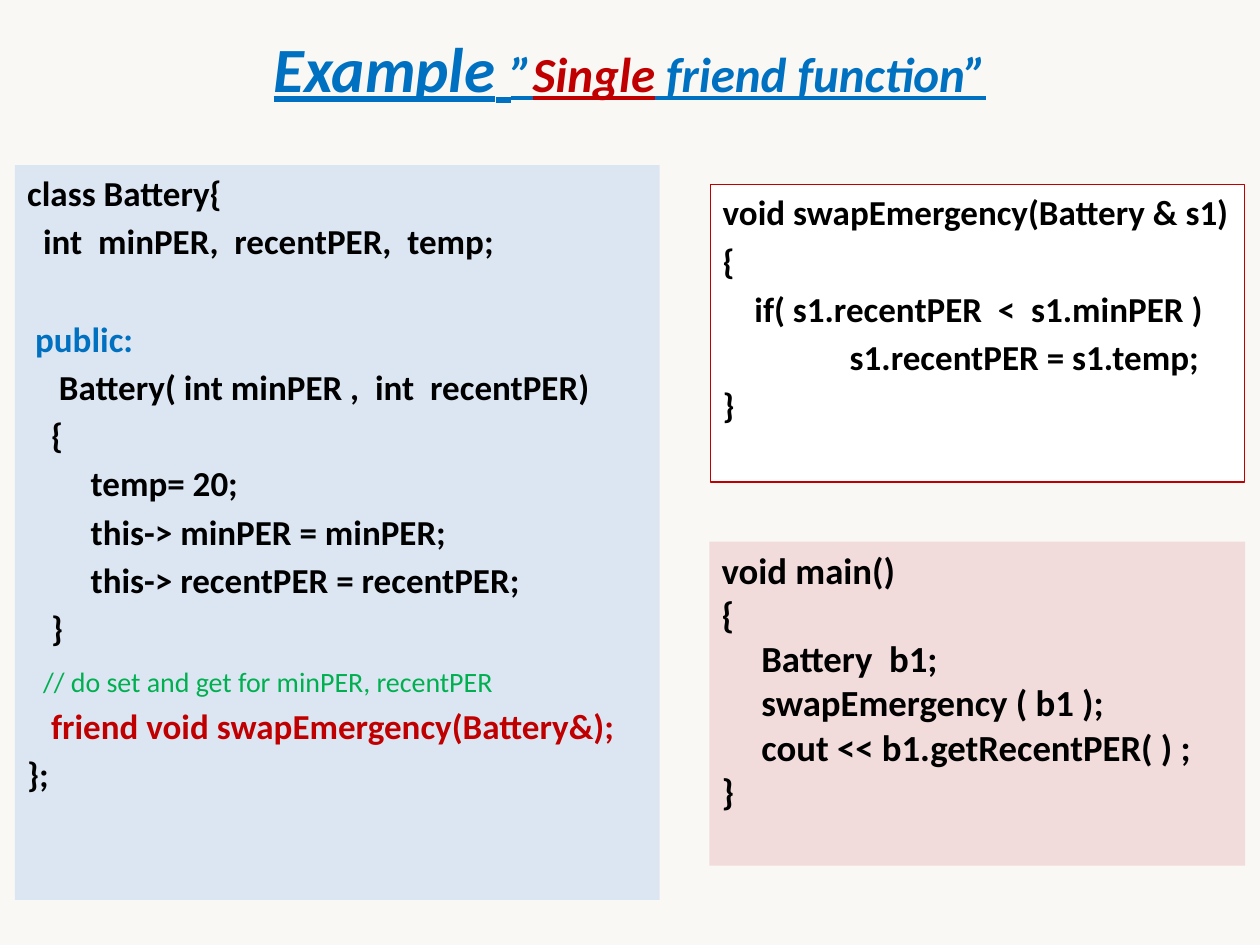
from pptx import Presentation
from pptx.dml.color import RGBColor
from pptx.enum.shapes import MSO_SHAPE
from pptx.enum.text import MSO_ANCHOR, MSO_AUTO_SIZE, PP_ALIGN
from pptx.util import Cm, Pt

BLACK, BLUE, RED, GREEN = "000000", "0070C0", "C00000", "00B050"
FONT = "Calibri"
BACKGROUND = "F9F8F4"
INDENT_STEP = 0.16  # cm, one column of code

TITLE_BOX = (1.27, -0.28, 22.86, 3.18)
TITLE = [  # text, size, italic, colour
    ("Example", 36, True, BLUE),
    (" ", 40, False, BLUE),
    ("”", 28, True, BLUE),
    ("Single", 28, True, RED),
    (" friend function”", 28, True, BLUE),
]

# Each line: indent in columns, text, then format values that differ from the panel's
PANELS = [
    {
        "box": (0.3, 3.33, 13, 14.81), "fill": "DCE6F2", "line": None,
        "size": 20, "space": 3.6,
        "lines": [
            (0, "class Battery{", {}),
            (2, "int  minPER,  recentPER,  temp;", {}),
            (1, "public:", {"color": BLUE, "space": 31.6}),
            (4, "Battery( int minPER ,  int  recentPER)", {}),
            (3, "{", {}),
            (8, "temp= 20;", {}),
            (8, "this-> minPER = minPER;", {}),
            (8, "this-> recentPER = recentPER;", {}),
            (3, "}", {}),
            (2, "// do set and get for minPER, recentPER",
             {"color": GREEN, "size": 16, "bold": False, "height": 24.4}),
            (3, "friend void swapEmergency(Battery&);", {"color": RED}),
            (0, "};", {}),
        ],
    },
    {
        "box": (14.32, 3.72, 10.77, 6), "fill": "FFFFFF", "line": RED,
        "size": 20, "space": 3.6,
        "lines": [
            (0, "void swapEmergency(Battery & s1)", {}),
            (0, "{", {}),
            (4, "if( s1.recentPER  <  s1.minPER )", {}),
            (16, "s1.recentPER = s1.temp;", {}),
            (0, "}", {}),
        ],
    },
    {
        "box": (14.3, 10.92, 10.8, 6.53), "fill": "F2DCDB", "line": None,
        "size": 21, "space": 0,
        "lines": [
            (0, "void main()", {}),
            (0, "{", {}),
            (5, "Battery  b1;", {}),
            (5, "swapEmergency ( b1 );", {}),
            (5, "cout << b1.getRecentPER( ) ;", {}),
            (0, "}", {}),
        ],
    },
]


def rgb(color):
    return RGBColor.from_string(color)


def add_run(paragraph, text, color, **format_values):
    run = paragraph.add_run()
    run.text = text
    run.font.color.rgb = rgb(color)
    for name, value in format_values.items():
        setattr(run.font, name, value)


def fill_title(title):
    title.left, title.top, title.width, title.height = map(Cm, TITLE_BOX)
    frame = title.text_frame
    frame.auto_size = MSO_AUTO_SIZE.NONE
    frame.vertical_anchor = MSO_ANCHOR.MIDDLE
    paragraph = frame.paragraphs[0]
    paragraph.alignment = PP_ALIGN.CENTER
    for text, size, italic, color in TITLE:
        add_run(paragraph, text, color, name=FONT, size=Pt(size),
                bold=True, italic=italic, underline=True)


def add_code_panel(slide, panel):
    shape = slide.shapes.add_shape(MSO_SHAPE.RECTANGLE, *map(Cm, panel["box"]))
    shape.shadow.inherit = False
    shape.fill.solid()
    shape.fill.fore_color.rgb = rgb(panel["fill"])
    if panel["line"]:
        shape.line.color.rgb = rgb(panel["line"])
        shape.line.width = Pt(0.75)
    else:
        shape.line.fill.background()

    frame = shape.text_frame
    frame.word_wrap = True
    frame.vertical_anchor = MSO_ANCHOR.TOP
    for number, (columns, text, changes) in enumerate(panel["lines"]):
        style = {"color": BLACK, "bold": True, "size": panel["size"],
                 "space": panel["space"], **changes}
        paragraph = frame.add_paragraph() if number else frame.paragraphs[0]
        paragraph.alignment = PP_ALIGN.LEFT
        paragraph.space_before = Pt(style["space"])
        if "height" in style:
            paragraph.line_spacing = Pt(style["height"])
        indent = Cm(columns * INDENT_STEP)
        paragraph._p.get_or_add_pPr().set("marL", str(indent))
        add_run(paragraph, text, style["color"], name=FONT,
                size=Pt(style["size"]), bold=style["bold"])


def main():
    presentation = Presentation()
    presentation.slide_width, presentation.slide_height = Cm(25.4), Cm(19.05)
    slide = presentation.slides.add_slide(presentation.slide_layouts[5])
    slide.background.fill.solid()
    slide.background.fill.fore_color.rgb = rgb(BACKGROUND)
    fill_title(slide.shapes.title)
    for panel in PANELS:
        add_code_panel(slide, panel)
    presentation.save("out.pptx")


if __name__ == "__main__":
    main()
